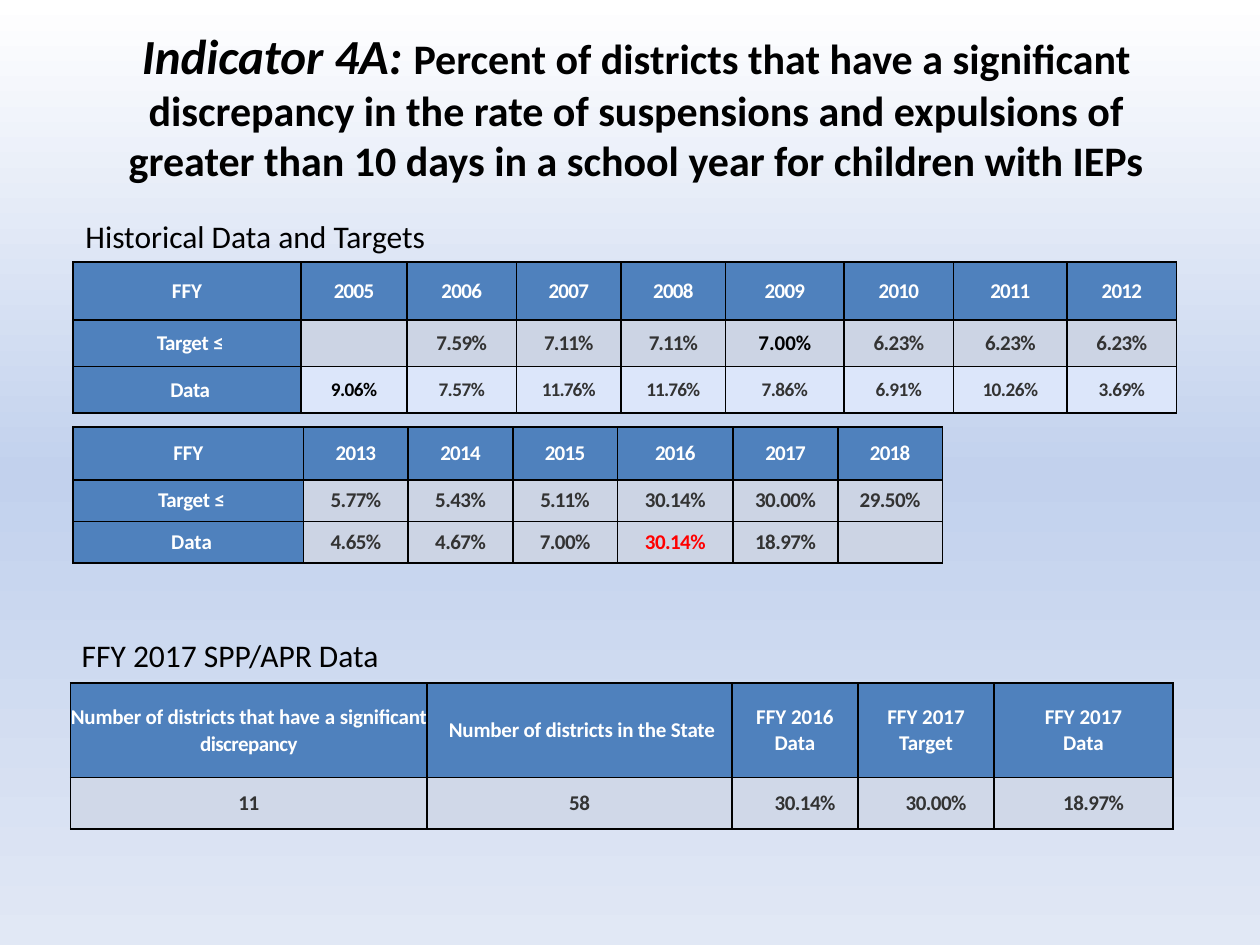
from copy import deepcopy
from dataclasses import dataclass

from lxml import etree
from pptx import Presentation
from pptx.dml.color import RGBColor
from pptx.enum.text import MSO_ANCHOR, PP_ALIGN
from pptx.oxml.ns import qn
from pptx.util import Inches, Pt

CENTER, LEFT = PP_ALIGN.CENTER, PP_ALIGN.LEFT
MIDDLE, TOP = MSO_ANCHOR.MIDDLE, MSO_ANCHOR.TOP


@dataclass(frozen=True)
class Theme:
    font: str = "Calibri"
    black: str = "000000"
    white: str = "FFFFFF"
    gray: str = "333333"
    red: str = "FF0000"
    header: str = "4F81BD"
    row: str = "CCD4E4"
    row_light: str = "DCE6FA"
    row_summary: str = "D0D8E8"
    gradient: tuple = ((0, "FFFFFF"), (0.5, "C2D1ED"), (1, "E1E8F5"))
    lead: float = 28
    title: float = 24
    caption: float = 18
    table: float = 12
    table_small: float = 11
    before: float = 3.8  # space above a table paragraph


T = Theme()


@dataclass(frozen=True)
class Run:
    text: str
    color: str = T.white
    size: float = T.table
    tracking: float = 0
    bold: bool = True
    italic: bool = False


@dataclass(frozen=True)
class Cell:
    paragraphs: tuple = ()
    fill: str = T.header
    indent: float = 0
    before: float = T.before
    line: float = 1
    padded: bool = False


# Text
def add_run(p, run: Run) -> None:
    r = p.add_run()
    r.text = run.text
    f = r.font
    f.name, f.size, f.bold, f.italic = T.font, Pt(run.size), run.bold, run.italic
    f.color.rgb = RGBColor.from_string(run.color)
    if run.tracking:
        r._r.get_or_add_rPr().set("spc", str(round(run.tracking * 100)))


def add_text(s, box: tuple, runs: tuple, align=LEFT, anchor=TOP) -> None:
    tf = s.shapes.add_textbox(*map(Inches, box)).text_frame
    tf.word_wrap = True
    tf.vertical_anchor = anchor
    p = tf.paragraphs[0]
    p.alignment = align
    for run in runs:
        add_run(p, run)


# Cell kinds
def head(*lines: str, tracking: float = 0, **style) -> Cell:
    return Cell(tuple((Run(t, tracking=tracking),) for t in lines), **style)


def year(text: str) -> Cell:
    return head(text, tracking=-0.5 if text == "2011" else -0.4)


def value(text: str, fill: str, color: str = T.gray, size: float = T.table,
          **style) -> Cell:
    if not text:
        return Cell(fill=fill)
    tracking = -0.5 if "11" in text and "%" in text else -0.3
    return Cell(((Run(text, color, size, tracking),),), fill, **style)


# Tables
def add_borders(cell) -> None:
    tc_pr = cell._tc.get_or_add_tcPr()
    for side in ("a:lnL", "a:lnR", "a:lnT", "a:lnB"):
        ln = etree.SubElement(tc_pr, qn(side), w=str(Pt(1)))
        solid = etree.SubElement(ln, qn("a:solidFill"))
        etree.SubElement(solid, qn("a:srgbClr"), val=T.black)


def fill_cell(cell, data: Cell) -> None:
    add_borders(cell)
    cell.fill.solid()
    cell.fill.fore_color.rgb = RGBColor.from_string(data.fill)
    cell.vertical_anchor = MIDDLE
    if not data.padded:
        cell.margin_left = cell.margin_right = cell.margin_top = cell.margin_bottom = 0
    tf = cell.text_frame
    for i, runs in enumerate(data.paragraphs):
        p = tf.add_paragraph() if i else tf.paragraphs[0]
        p.alignment = CENTER
        p.space_before = Pt(data.before)
        p.line_spacing = data.line
        if data.indent:
            p._p.get_or_add_pPr().set("marL", str(Inches(data.indent)))
        for run in runs:
            add_run(p, run)


def add_table(s, left: float, top: float, widths: tuple, heights: tuple,
              rows: list) -> None:
    frame = s.shapes.add_table(len(heights), len(widths), Inches(left), Inches(top),
                               Inches(sum(widths)), Inches(sum(heights)))
    table = frame.table
    table.first_row = table.horz_banding = False
    for column, width in zip(table.columns, widths):
        column.width = Inches(width)
    for row, height, cells in zip(table.rows, heights, rows):
        row.height = Inches(height)
        for cell, data in zip(row.cells, cells):
            fill_cell(cell, data)


def yearly_rows(first_year: int, targets: list, results: list,
                data_label: Cell) -> list:
    years = [year(str(first_year + i)) for i in range(len(targets))]
    target_label = Cell(((Run("Target ", tracking=-0.2), Run("≤")),), indent=0.05)
    return [[head("FFY"), *years], [target_label, *targets], [data_label, *results]]


def set_background(s) -> None:
    fill = s.background.fill
    fill.gradient()
    fill.gradient_angle = 270
    stops = s._element.find(".//" + qn("a:gsLst"))
    stops.append(deepcopy(stops[0]))
    for stop, (position, color) in zip(fill.gradient_stops, T.gradient):
        stop.position = position
        stop.color.rgb = RGBColor.from_string(color)


def main() -> None:
    prs = Presentation()
    prs.slide_width, prs.slide_height = Inches(10), Inches(7.5)
    s = prs.slides.add_slide(prs.slide_layouts[6])
    set_background(s)

    # Title and captions
    add_text(s, (0.55, 0.17, 9, 1.33), (
        Run("Indicator 4A: ", T.black, T.lead, italic=True),
        Run("Percent of districts that have a significant discrepancy in the rate of "
            "suspensions and expulsions of greater than 10 days in a school year for "
            "children with IEPs", T.black, T.title)), CENTER, MIDDLE)
    for left, top, text in ((0.58, 1.67, "Historical Data and Targets"),
                            (0.55, 5, "FFY 2017 SPP/APR Data")):
        add_text(s, (left, top, 5.08, 0.4),
                 (Run(text, T.black, T.caption, bold=False),))

    # History, 2005 to 2012
    targets = [value(t, T.row) for t in
               ("", "7.59%", "7.11%", "7.11%", "", "6.23%", "6.23%", "6.23%")]
    targets[4] = Cell(((Run("7.00%", T.black),),), T.row, before=0)
    results = [value("9.06%", T.row_light, T.black, T.table_small, before=2)]
    results += [value(t, T.row_light, size=T.table_small) for t in
                ("7.57%", "11.76%", "11.76%", "7.86%", "6.91%", "10.26%", "3.69%")]
    add_table(s, 0.58, 2.08, (1.81, 0.84, 0.87, 0.83, 0.83, 0.94, 0.87, 0.9, 0.87),
              (0.46, 0.37, 0.37),
              yearly_rows(2005, targets, results,
                          head("Data", tracking=-0.2, indent=0.05, before=2)))

    # History, 2013 to 2018
    targets = [value(t, T.row) for t in
               ("5.77%", "5.43%", "5.11%", "30.14%", "30.00%", "29.50%")]
    results = [value(t, T.row, T.red if t == "30.14%" else T.gray) for t in
               ("4.65%", "4.67%", "7.00%", "30.14%", "18.97%", "")]
    add_table(s, 0.58, 3.39, (1.83, 0.83, 0.83, 0.83, 0.92, 0.83, 0.83),
              (0.42, 0.33, 0.33),
              yearly_rows(2013, targets, results, head("Data", indent=0.05)))

    # Summary for 2017
    discrepancy = Cell(((Run("Number of districts that have ", tracking=-0.1),
                         Run("a "), Run("significant ", tracking=-0.1),
                         Run("discrepancy", tracking=-0.3)),), line=1.07)
    in_state = Cell(((Run(" "),
                      Run("Number of districts in the State", tracking=-0.1)),), before=0)
    headers = [head(*lines, before=0, padded=True) for lines in
               (("FFY 2016", "Data"), ("FFY 2017", "Target"), ("FFY 2017", "Data"))]
    counts = [value(t, T.row_summary) for t in ("11", "58")]
    rates = [value(t, T.row_summary, indent=0.16) for t in
             ("30.14%", "30.00%", "18.97%")]
    add_table(s, 0.56, 5.42, (2.83, 2.42, 1, 1.08, 1.42), (0.75, 0.41),
              [[discrepancy, in_state, *headers], [*counts, *rates]])

    prs.save("out.pptx")


if __name__ == "__main__":
    main()
